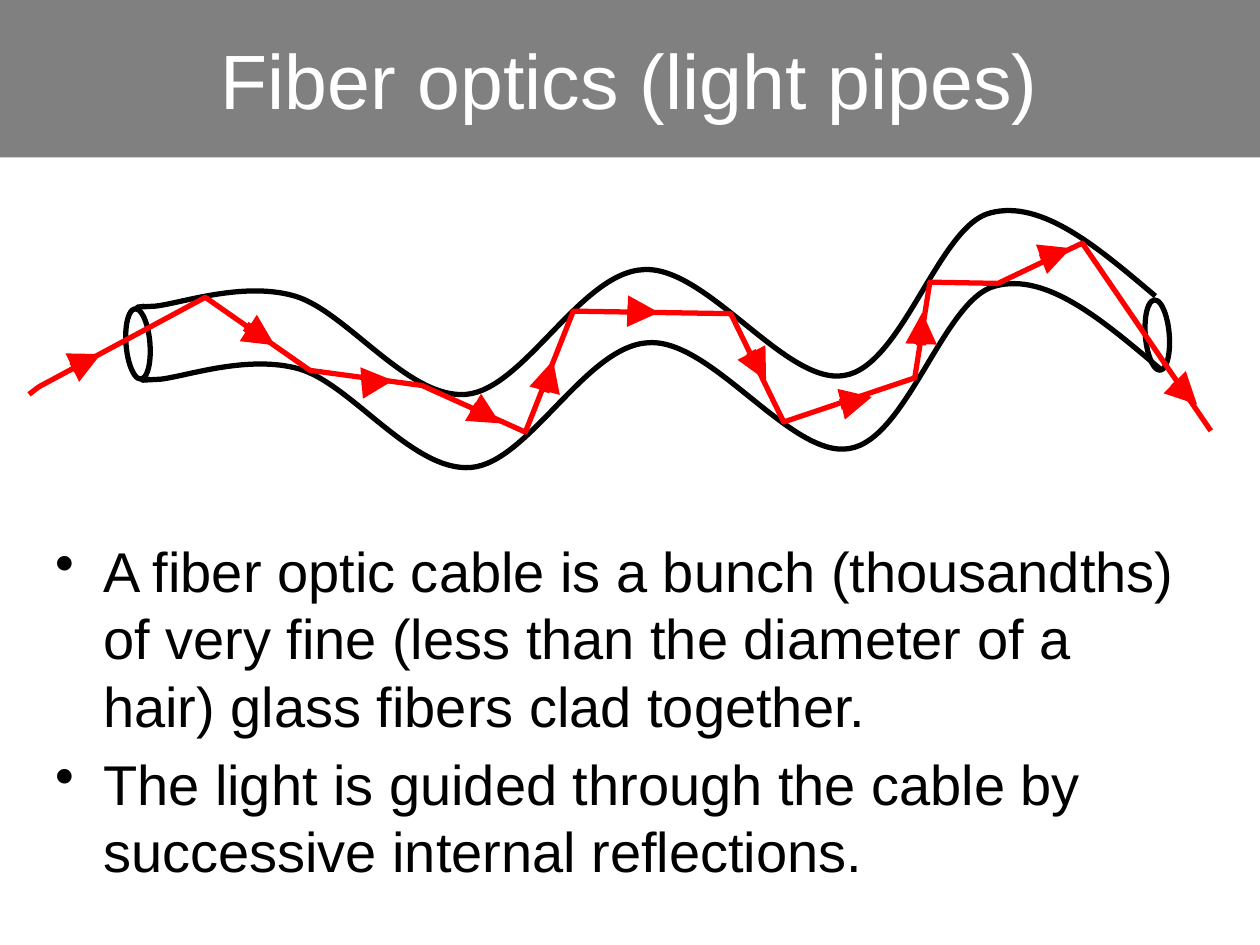
from pptx import Presentation
from pptx.dml.color import RGBColor
from pptx.enum.shapes import MSO_CONNECTOR, MSO_SHAPE
from pptx.enum.text import MSO_ANCHOR, PP_ALIGN
from pptx.oxml.ns import qn
from pptx.oxml.xmlchemy import OxmlElement
from pptx.util import Inches, Pt

COLS, ROWS = 10, 7.5
BLACK, WHITE, GREY, RED = "000000", "FFFFFF", "808080", "FF0000"

WALL = [(1.15, 2.43),
        (1.09, 2.44), (1.03, 2.44), (1.23, 2.43),
        (1.43, 2.41), (1.93, 2.23), (2.34, 2.35),
        (2.75, 2.47), (3.24, 3.17), (3.7, 3.13),
        (4.16, 3.09), (4.61, 2.16), (5.11, 2.14),
        (5.61, 2.11), (6.24, 3.06), (6.7, 2.98),
        (7.16, 2.91), (7.45, 1.79), (7.86, 1.69),
        (8.27, 1.58), (8.72, 1.97), (9.17, 2.35)]
WALL_OFFSET = (0.04, 0.58)
PIPE_ENDS = [(1, 2.45), (9.09, 2.38)]
RAY = [(0.23, 3.13), (0.31, 3.07), (1.63, 2.36), (2.46, 2.94), (3.35, 3.06),
       (4.17, 3.43), (4.55, 2.47), (5.8, 2.49), (6.22, 3.35), (7.26, 3),
       (7.38, 2.24), (7.92, 2.25), (8.59, 1.93), (9.61, 3.42)]
RAY_ARROWS = [((0.57, 2.92), (0.8, 2.81)), ((1.95, 2.59), (2.18, 2.74)),
              ((2.87, 3.04), (3.12, 3.02)), ((3.75, 3.23), (3.97, 3.36)),
              ((4.32, 3.11), (4.39, 2.86)), ((4.98, 2.47), (5.23, 2.48)),
              ((5.96, 2.79), (6.08, 3.02)), ((6.67, 3.21), (6.92, 3.15)),
              ((7.31, 2.74), (7.32, 2.48)), ((8.26, 2.06), (8.5, 1.97)),
              ((9.32, 3.03), (9.5, 3.21))]
BULLETS = [
    "A fiber optic cable is a bunch (thousandths) of very fine (less than "
    "the diameter of a hair) glass fibers clad together.",
    "The light is guided through the cable by successive internal reflections.",
]


def rgb(color):
    return RGBColor.from_string(color)


def write(p, text, size=32, color=BLACK, align=PP_ALIGN.LEFT, font="Arial"):
    p.alignment = align
    r = p.add_run()
    r.text = text
    r.font.name, r.font.size = font, Pt(size)
    r.font.color.rgb = rgb(color)


def add_bullet(p, indent):
    pPr = p._p.get_or_add_pPr()
    pPr.set("marL", str(indent))
    pPr.set("indent", str(-indent))
    bullet = OxmlElement("a:buChar")
    bullet.set("char", "•")
    pPr.append(bullet)


def bend(sp):
    """Turn every three line segments of a freeform into one Bézier curve."""
    path = sp._element.find(".//" + qn("a:path"))
    lines = path.findall(qn("a:lnTo"))
    for i in range(0, len(lines), 3):
        curve = OxmlElement("a:cubicBezTo")
        lines[i].addprevious(curve)
        for line in lines[i:i + 3]:
            curve.append(line[0])
            path.remove(line)


class Sketch:
    """The current slide, its grid and its line style."""

    def __init__(self, prs, line_width=3):
        self.prs, self.line_width = prs, line_width
        self.s = prs.slides.add_slide(prs.slide_layouts[6])
        self.shapes = self.s.shapes

    def xy(self, col, row):
        return (round(self.prs.slide_width * col / COLS),
                round(self.prs.slide_height * row / ROWS))

    def group(self):
        """Collect the elements that follow in a new group."""
        self.shapes = self.s.shapes.add_group_shape().shapes

    def outline(self, sp, color):
        sp.shadow.inherit = False
        sp.fill.background()
        sp.line.color.rgb = rgb(color)
        sp.line.width = Pt(self.line_width)

    def title(self, text, height):
        sp = self.shapes.add_shape(MSO_SHAPE.RECTANGLE, 0, 0, *self.xy(COLS, height))
        sp.shadow.inherit = False
        sp.fill.solid()
        sp.fill.fore_color.rgb = rgb(GREY)
        sp.line.fill.background()
        tf = sp.text_frame
        tf.vertical_anchor = MSO_ANCHOR.MIDDLE
        write(tf.paragraphs[0], text, size=44, color=WHITE, align=PP_ALIGN.CENTER)

    def bullets(self, items, left, top, width, height):
        tf = self.shapes.add_textbox(*self.xy(left, top),
                                     *self.xy(width, height)).text_frame
        tf.word_wrap = True
        for i, text in enumerate(items):
            p = tf.add_paragraph() if i else tf.paragraphs[0]
            p.space_before = Pt(6.4)
            add_bullet(p, self.xy(0.38, 0)[0])
            write(p, text)

    def freeform(self, points, color, curved=False):
        start, *rest = [self.xy(*point) for point in points]
        builder = self.shapes.build_freeform(*start)
        builder.add_line_segments(rest, close=False)
        sp = builder.convert_to_shape()
        if curved:
            bend(sp)
        self.outline(sp, color)

    def ellipse(self, left, top, width, height, rotation):
        sp = self.shapes.add_shape(MSO_SHAPE.OVAL, *self.xy(left, top),
                                   *self.xy(width, height))
        sp.rotation = rotation
        self.outline(sp, BLACK)

    def arrow(self, start, end, color):
        c = self.shapes.add_connector(MSO_CONNECTOR.STRAIGHT,
                                      *self.xy(*start), *self.xy(*end))
        c.line.color.rgb = rgb(color)
        c.line.width = Pt(2 * self.line_width)
        head = OxmlElement("a:tailEnd")
        head.set("type", "triangle")
        c.line._get_or_add_ln().append(head)
        c._element.spPr.append(OxmlElement("a:effectLst"))


def main():
    prs = Presentation()
    prs.slide_width, prs.slide_height = Inches(10), Inches(7.5)
    sketch = Sketch(prs)
    sketch.title("Fiber optics (light pipes)", height=1.25)
    sketch.bullets(BULLETS, 0.34, 4.21, 9.26, 3.02)

    sketch.group()
    dx, dy = WALL_OFFSET
    sketch.freeform(WALL, BLACK, curved=True)
    sketch.freeform([(x + dx, y + dy) for x, y in WALL], BLACK, curved=True)
    for left, top in PIPE_ENDS:
        sketch.ellipse(left, top, 0.19, 0.56, rotation=355.3)

    sketch.group()
    sketch.freeform(RAY, RED)
    for start, end in RAY_ARROWS:
        sketch.arrow(start, end, RED)
    prs.save("out.pptx")


if __name__ == "__main__":
    main()
